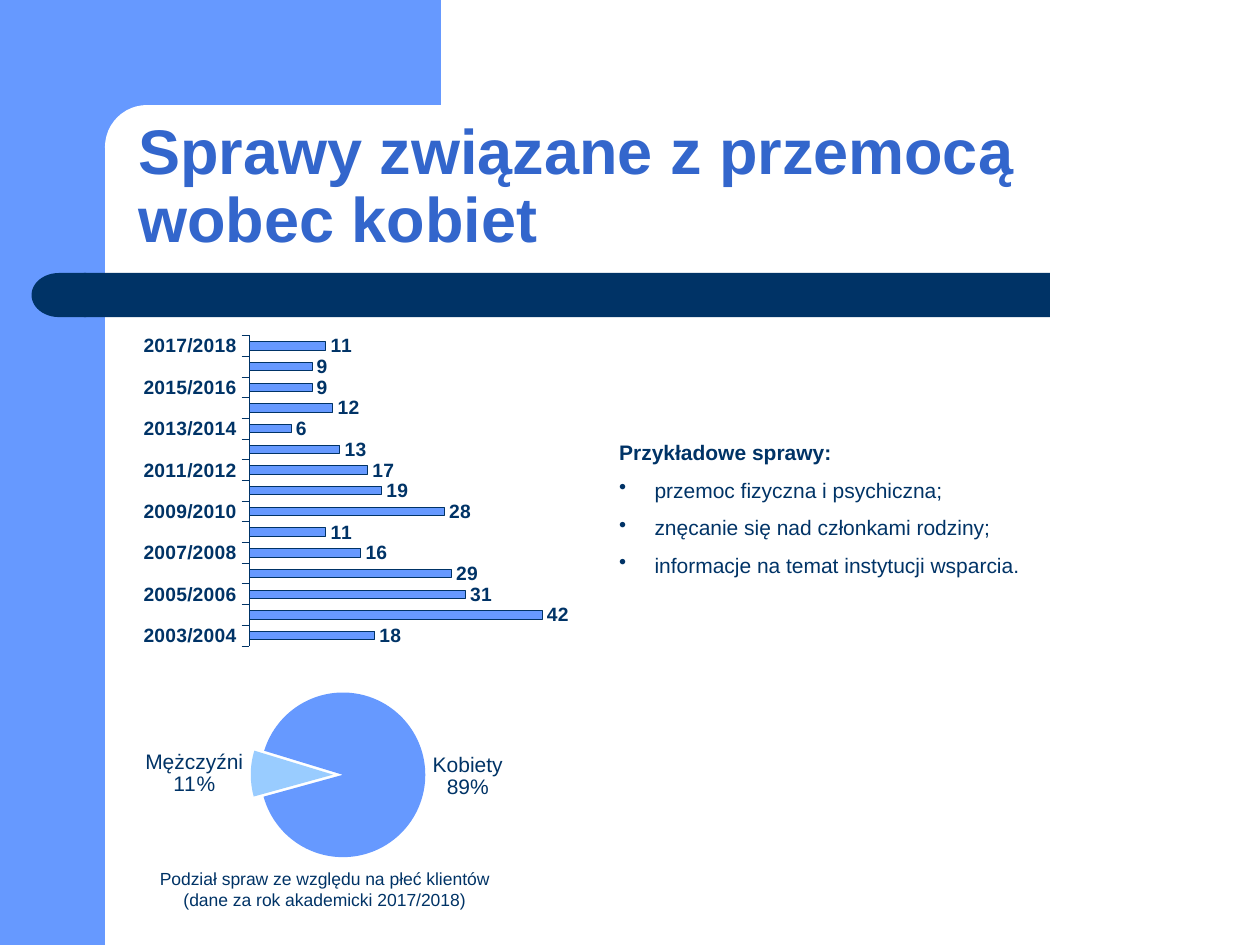
from lxml import etree
from pptx import Presentation
from pptx.chart.data import CategoryChartData
from pptx.dml.color import RGBColor
from pptx.enum.chart import XL_CHART_TYPE, XL_LABEL_POSITION, XL_TICK_MARK
from pptx.enum.shapes import MSO_SHAPE
from pptx.enum.text import MSO_ANCHOR, PP_ALIGN
from pptx.oxml.ns import qn
from pptx.util import Inches, Pt

RECTANGLE = MSO_SHAPE.RECTANGLE
ROUNDED = MSO_SHAPE.ROUNDED_RECTANGLE
DELAY = MSO_SHAPE.FLOWCHART_DELAY
BAR = XL_CHART_TYPE.BAR_CLUSTERED
PIE = XL_CHART_TYPE.PIE
OUTSIDE_END = XL_LABEL_POSITION.OUTSIDE_END
TICK_OUTSIDE = XL_TICK_MARK.OUTSIDE
TOP, BOTTOM = MSO_ANCHOR.TOP, MSO_ANCHOR.BOTTOM
LEFT, CENTER = PP_ALIGN.LEFT, PP_ALIGN.CENTER

COLORS = {"navy": "003366", "blue": "6699FF", "title": "3366CC",
          "pale": "99CCFF", "white": "FFFFFF"}
FONT = "Arial"
COLUMNS, ROWS = 120, 90
CELL = Inches(1 / 12)
CASES = [18, 42, 31, 29, 16, 11, 28, 19, 17, 13, 6, 12, 9, 9, 11]
FIRST_YEAR = 2003
CLIENTS = {"Kobiety": (91, "89%", "blue"), "Mężczyźni": (9, "11%", "pale")}
EXAMPLES = ["przemoc fizyczna i psychiczna;",
            "znęcanie się nad członkami rodziny;",
            "informacje na temat instytucji wsparcia."]


def color(name):
    return RGBColor.from_string(COLORS[name])


def grid(*cells):
    return [round(cell * CELL) for cell in cells]


def set_font(font, size, bold=False, tone="navy"):
    font.name = FONT
    font.size = Pt(size)
    font.bold = bold
    font.color.rgb = color(tone)


def paint(fill, tone):
    fill.solid()
    fill.fore_color.rgb = color(tone)


def add_panel(slide, preset, cells, tone):
    panel = slide.shapes.add_shape(preset, *grid(*cells))
    panel.shadow.inherit = False
    paint(panel.fill, tone)
    panel.line.fill.background()
    return panel


def add_text(slide, cells, lines, size, bold=False, tone="navy",
             align=LEFT, anchor=TOP):
    frame = slide.shapes.add_textbox(*grid(*cells)).text_frame
    frame.word_wrap = True
    frame.vertical_anchor = anchor
    frame.text = "\n".join(lines)
    for paragraph in frame.paragraphs:
        paragraph.alignment = align
        set_font(paragraph.font, size, bold, tone)
    return frame.paragraphs


def add_bullet(paragraph):
    properties = paragraph._p.get_or_add_pPr()
    indent = Inches(0.28)
    properties.set("marL", str(indent))
    properties.set("indent", str(-indent))
    bullet = etree.Element(qn("a:buChar"), char="•")
    defaults = properties.find(qn("a:defRPr"))
    if defaults is None:
        properties.append(bullet)
    else:
        defaults.addprevious(bullet)


def set_plot_area(chart, x, y, w, h):
    area = chart._chartSpace.chart.plotArea
    for old in area.findall(qn("c:layout")):
        area.remove(old)
    layout = etree.Element(qn("c:layout"))
    manual = etree.SubElement(layout, qn("c:manualLayout"))
    settings = {"layoutTarget": "inner", "xMode": "edge", "yMode": "edge",
                "x": x, "y": y, "w": w, "h": h}
    for tag, value in settings.items():
        etree.SubElement(manual, qn(f"c:{tag}"), val=str(value))
    area.insert(0, layout)


def add_chart(slide, kind, cells, categories, values, plot_area):
    data = CategoryChartData()
    data.categories = categories
    data.add_series("Sprawy", values)
    chart = slide.shapes.add_chart(kind, *grid(*cells), data).chart
    chart.has_title = False
    chart.has_legend = False
    set_font(chart.font, 12)
    set_plot_area(chart, *plot_area)
    return chart


def add_cases_chart(slide):
    years = [f"{year}/{year + 1}"
             for year in range(FIRST_YEAR, FIRST_YEAR + len(CASES))]
    chart = add_chart(slide, BAR, (9, 29.25, 52, 34.5), years, CASES,
                      (0.283, 0.078, 0.575, 0.857))
    plot = chart.plots[0]
    plot.gap_width = 150
    plot.vary_by_categories = False
    bars = plot.series[0].format
    paint(bars.fill, "blue")
    bars.line.color.rgb = color("navy")
    bars.line.width = Pt(0.25)

    plot.has_data_labels = True
    labels = plot.data_labels
    labels.show_value = True
    labels.position = OUTSIDE_END
    set_font(labels.font, 11, True)

    year_axis = chart.category_axis
    year_axis.major_tick_mark = TICK_OUTSIDE
    set_font(year_axis.tick_labels.font, 11, True)
    year_axis.format.line.color.rgb = color("navy")
    year_axis.format.line.width = Pt(0.15)
    count_axis = chart.value_axis
    count_axis.minimum_scale = 0
    count_axis.maximum_scale = 45
    count_axis.has_major_gridlines = False
    count_axis.visible = False


def add_clients_chart(slide):
    chart = add_chart(slide, PIE, (4.9, 63.8, 52, 19.8), list(CLIENTS),
                      [share for share, _, _ in CLIENTS.values()],
                      (0.365, 0.085, 0.32, 0.84))
    plot = chart.plots[0]
    plot.vary_by_categories = True
    series = plot.series[0]
    for index, (client, (_, percent, tone)) in enumerate(CLIENTS.items()):
        slice_format = series.points[index].format
        paint(slice_format.fill, tone)
        slice_format.line.fill.background()
        label = series.points[index].data_label
        label.text_frame.text = f"{client}\n{percent}"
        for paragraph in label.text_frame.paragraphs:
            set_font(paragraph.font, 12)
        label.position = OUTSIDE_END
    explosion = etree.Element(qn("c:explosion"), val="6")
    series._element.find(qn("c:dPt")).addprevious(explosion)
    pie = plot._element
    for old in pie.findall(qn("c:firstSliceAng")):
        pie.remove(old)
    etree.SubElement(pie, qn("c:firstSliceAng"), val="287")


def add_backdrop(slide):
    add_panel(slide, RECTANGLE, (0, 0, 10, ROWS), "blue")
    add_panel(slide, RECTANGLE, (9, 0, 33, 14), "blue")
    add_panel(slide, ROUNDED, (10, 10, 67, 8), "white").adjustments[0] = 0.5
    add_panel(slide, RECTANGLE, (8, 26, 92, 4.2), "navy")
    add_panel(slide, DELAY, (3, 26, 5.2, 4.2), "navy").rotation = 180


def main():
    deck = Presentation()
    deck.slide_width, deck.slide_height = grid(COLUMNS, ROWS)
    slide = deck.slides.add_slide(deck.slide_layouts[6])
    add_backdrop(slide)

    title = add_text(slide, (12, 10, 105, 15),
                     ["Sprawy związane z przemocą wobec kobiet"],
                     36, True, "title", anchor=BOTTOM)
    title[0].line_spacing = 0.9

    heading, *examples = add_text(slide, (57.8, 41.3, 49.4, 14.5),
                                  ["Przykładowe sprawy:", *EXAMPLES], 12)
    heading.font.bold = True
    for example in examples:
        example.space_before = Pt(7)
        add_bullet(example)

    add_cases_chart(slide)
    add_clients_chart(slide)
    add_text(slide, (12.7, 82.1, 36.4, 5.2),
             ["Podział spraw ze względu na płeć klientów "
              "(dane za rok akademicki 2017/2018)"], 10, align=CENTER)
    deck.save("out.pptx")


if __name__ == "__main__":
    main()
